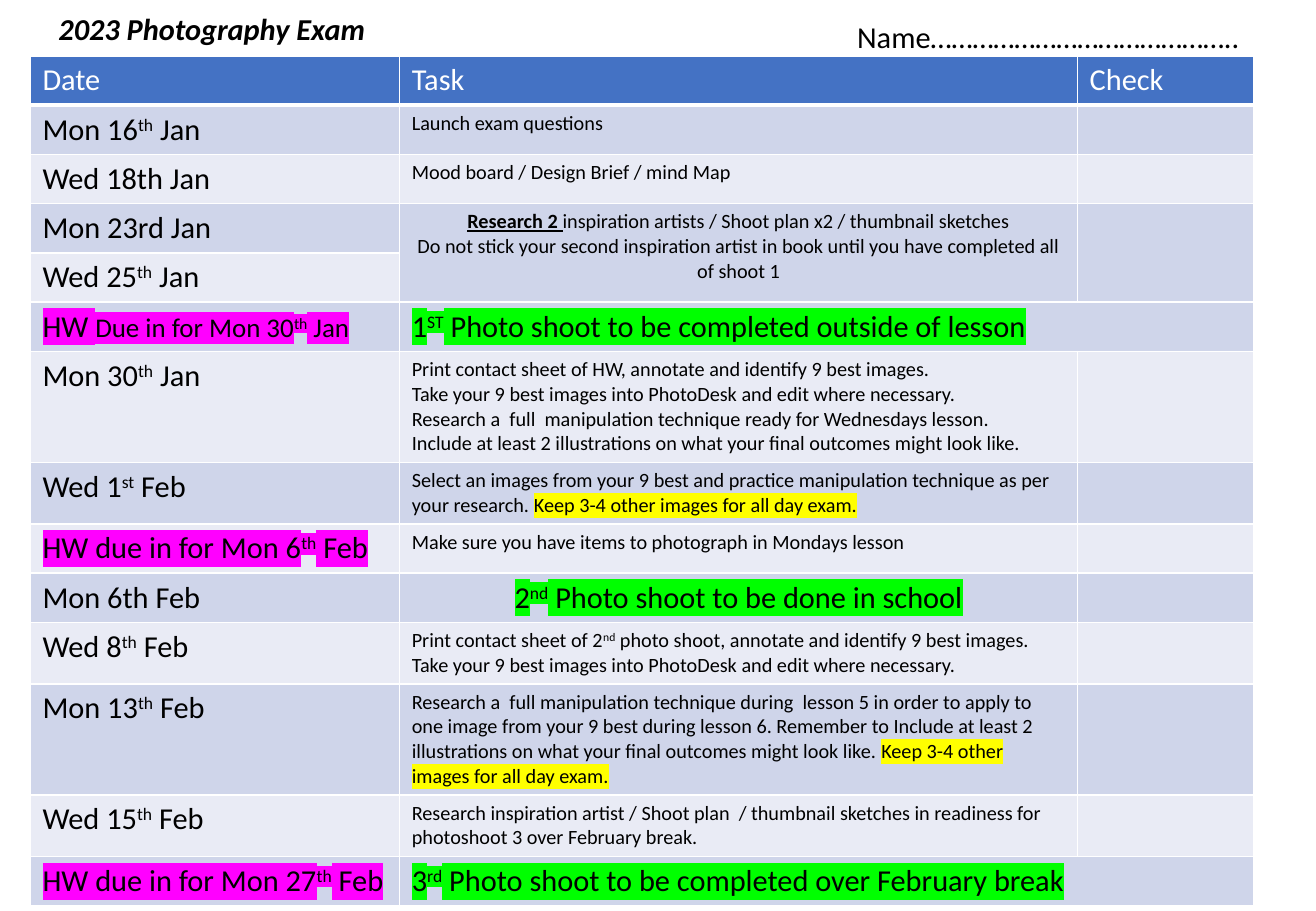
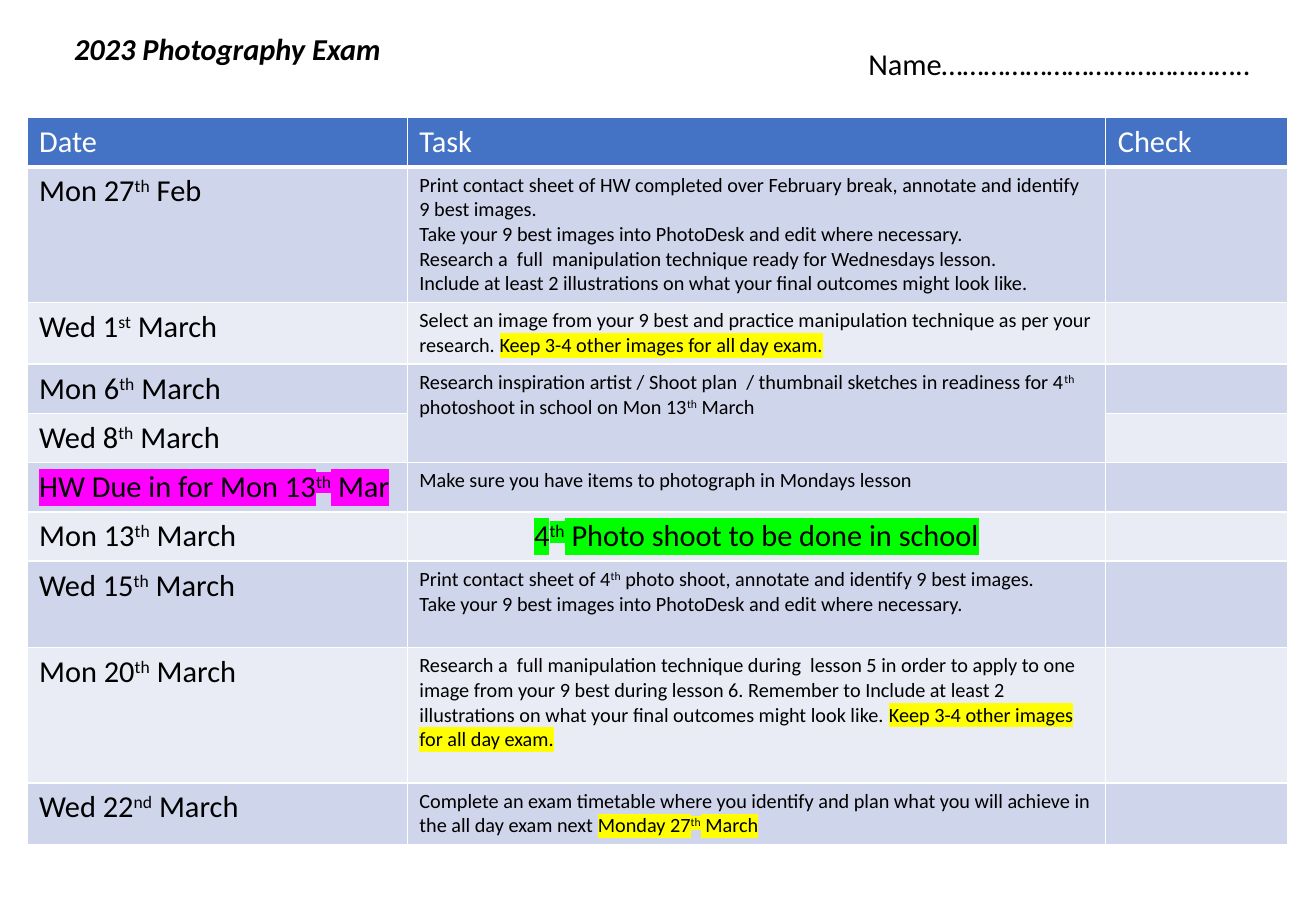
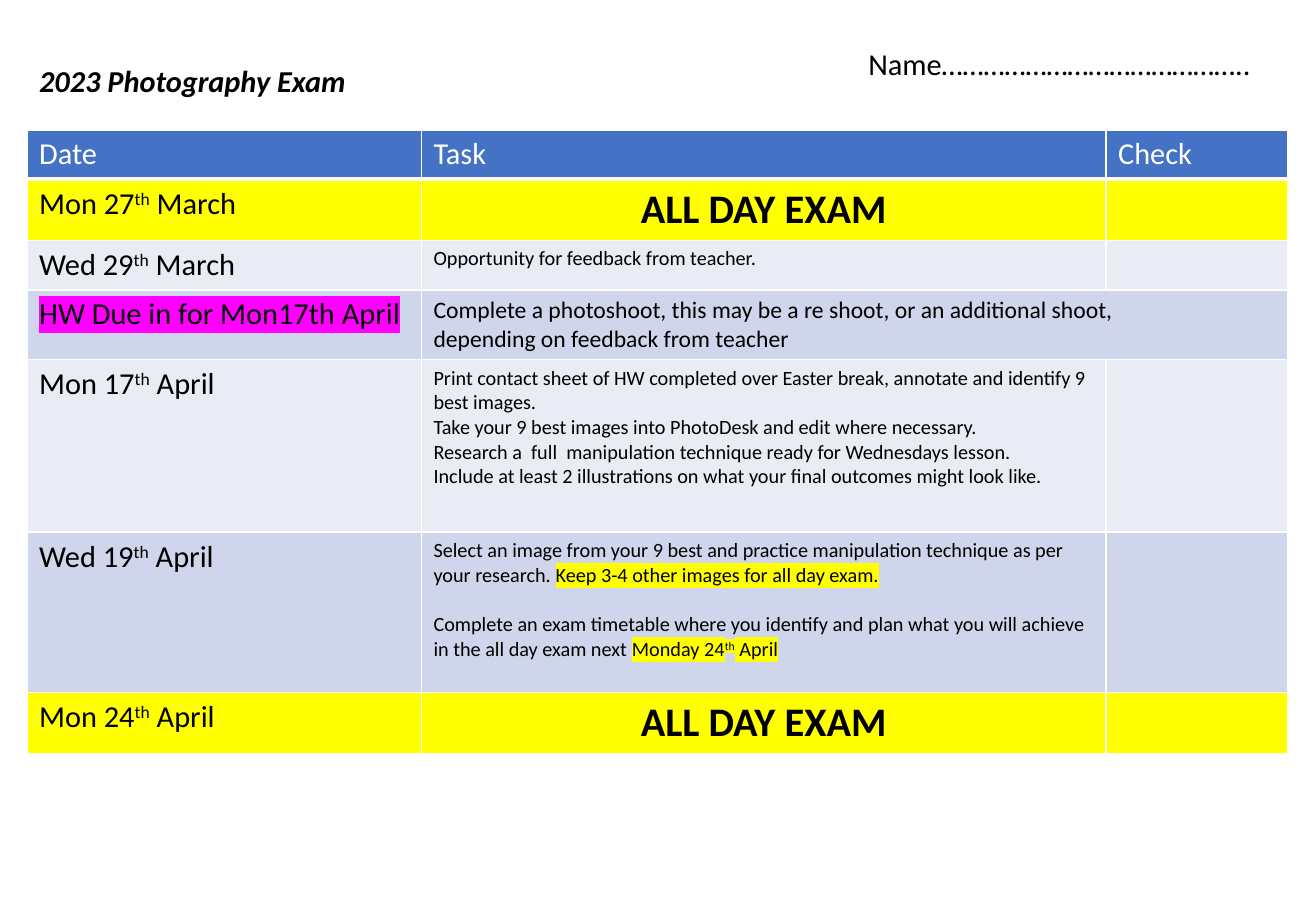
"""Build a three-page photography exam timetable."""
from dataclasses import dataclass

from lxml import etree
from pptx import Presentation
from pptx.dml.color import RGBColor
from pptx.enum.text import MSO_ANCHOR, MSO_AUTO_SIZE, PP_ALIGN
from pptx.oxml.ns import qn
from pptx.util import Pt

LEFT, CENTER = PP_ALIGN.LEFT, PP_ALIGN.CENTER
TOP = MSO_ANCHOR.TOP
GROW = MSO_AUTO_SIZE.SHAPE_TO_FIT_TEXT


@dataclass
class Theme:
    font: str = "Calibri"
    head: str = "4472C4"
    dark: str = "CFD5EA"
    light: str = "E9EBF5"
    white: str = "FFFFFF"
    black: str = "000000"
    yellow: str = "FFFF00"
    pink: str = "FF00FF"
    green: str = "00FF00"
    large: int = 24
    main: int = 18
    due: int = 16
    note: int = 14
    small: int = 12


T = Theme()
MARKS = {
    "^": {"sup": True},
    "#": {"glow": T.pink},
    "@": {"glow": T.green, "size": T.main},
    "~": {"glow": T.yellow},
    "%": {"size": T.due},
    "&": {"size": T.note},
    "$": {"size": T.large, "bold": True},
    "*": {"bold": True, "line": True},
}


def write(para, text, size, color):
    """Fill a paragraph, where each mark switches a run style on or off."""
    para.alignment = CENTER if text.startswith("=") else LEFT
    if text.startswith(">"):
        para.space_before = Pt(14.6)
    parts, live = [["", []]], []
    for char in text.lstrip("=>"):
        if char in MARKS:
            live = [m for m in live if m != char] if char in live else live + [char]
            parts.append(["", live])
        else:
            parts[-1][0] += char
    for words, marks in parts:
        if not words:
            continue
        look = {"size": size}
        for mark in marks:
            look.update(MARKS[mark])
        run = para.add_run()
        run.text = words
        font = run.font
        font.size, font.bold = Pt(look["size"]), look.get("bold", False)
        font.underline = look.get("line", False)
        font.color.rgb = RGBColor.from_string(color)
        font.name = T.font
        props = run.font._element
        if "sup" in look:
            props.set("baseline", "30000")
        if "glow" in look:
            glow = etree.Element(qn("a:highlight"))
            etree.SubElement(glow, qn("a:srgbClr"), val=look["glow"])
            props.find(qn("a:latin")).addprevious(glow)


def paint(cell, fill, base):
    """Give a cell its white borders and its fill."""
    props = cell._tc.get_or_add_tcPr()
    for side, width in (("L", 1), ("R", 1), ("T", 1), ("B", base)):
        edge = etree.SubElement(props, qn(f"a:ln{side}"), w=str(Pt(width)))
        solid = etree.SubElement(edge, qn("a:solidFill"))
        etree.SubElement(solid, qn("a:srgbClr"), val=T.white)
    cell.fill.solid()
    cell.fill.fore_color.rgb = RGBColor.from_string(fill)


KEEP = "~Keep 3-4 other images for all day exam.~"
EDIT = "Take your 9 best images into PhotoDesk and edit where necessary."
LOOK = "nclude at least 2 illustrations on what your final outcomes might look like."
STEPS = f"{EDIT}\nResearch a  full  manipulation technique ready for Wednesdays lesson.\nI{LOOK}"
PRINT = "Print contact sheet of"
BEST = "annotate and identify 9 best images."
PICK = f"from your 9 best and practice manipulation technique as per your research. {KEEP}"
STUDY = ("Research a  full manipulation technique during  lesson 5 in order to apply to "
         f"one image from your 9 best during lesson 6. Remember to I{LOOK} {KEEP}")
PLAN = "Research inspiration artist / Shoot plan  / thumbnail sketches in readiness for"
ITEMS = "Make sure you have items to photograph in Mondays lesson"
TIMES = ("Complete an exam timetable where you identify and plan what you will achieve "
         "in the all day exam next")
EXAM = "=$ALL DAY EXAM$"
HEAD = (29.2, "Date", "Task")

PAGES = [
    {
        "title": (27.4, 2.2), "name": (501, 7.2), "grid": (18, 33.1),
        "cols": (218.9, 401.8, 104.4),
        "spans": [(3, 1, 4, 1), (3, 2, 4, 2), (5, 1, 5, 2), (13, 1, 13, 2)],
        "rows": [
            HEAD,
            (29.2, "Mon 16^th^ Jan", "Launch exam questions"),
            (29.2, "Wed 18th Jan", "Mood board / Design Brief / mind Map"),
            (29.2, "Mon 23rd Jan",
             "=*Research 2 *inspiration artists / Shoot plan x2 / thumbnail sketches\n"
             "=Do not stick your second inspiration artist in book until you have "
             "completed all of shoot 1"),
            (29.2, "Wed 25^th^ Jan", ""),
            (29.2, "#HW %Due in for Mon 30^th^ Jan%#",
             "@1^ST^ Photo shoot to be completed outside of lesson@"),
            (65.8, "Mon 30^th^ Jan", f"{PRINT} HW, {BEST}\n{STEPS}"),
            (36.5, "Wed 1^st^ Feb", f"Select an images {PICK}"),
            (29.2, "#HW due in for Mon 6^th^ Feb#", ITEMS),
            (29.2, "Mon 6th Feb", "=@2^nd^ Photo shoot to be done in school@"),
            (36.5, "Wed 8^th^ Feb", f"{PRINT} 2^nd^ photo shoot, {BEST}\n{EDIT}"),
            (65.8, "Mon 13^th^ Feb", STUDY),
            (36.5, "Wed 15^th^ Feb", f"{PLAN} photoshoot 3 over February break."),
            (29.2, "#HW due in for Mon 27^th^ Feb#",
             "@3^rd^ Photo shoot to be completed over February break@"),
        ],
    },
    {
        "title": (36.7, 14.4), "name": (507.6, 23), "grid": (16, 69.8),
        "cols": (225.4, 414, 108),
        "spans": [(3, 1, 4, 1)],
        "rows": [
            HEAD,
            (80.4, "Mon 27^th^ Feb",
             f"{PRINT} HW completed over February break, {BEST}\n{STEPS}"),
            (36.5, "Wed 1^st^ March", f"Select an image {PICK}"),
            (29.2, "Mon 6^th^ March",
             f"{PLAN} 4^th^  photoshoot in school on Mon 13^th^ March"),
            (29.2, "Wed 8^th^ March", ""),
            (29.2, "#HW Due in for Mon 13^th^ Mar#", ITEMS),
            (29.2, "Mon 13^th^ March", "=@4^th^ Photo shoot to be done in school@"),
            (51.1, "Wed 15^th^ March", f"{PRINT} 4^th^ photo shoot, {BEST}\n{EDIT}"),
            (80.4, "Mon 20^th^ March", STUDY),
            (36.5, "Wed 22^nd^ March", f"{TIMES} ~Monday 27^th^ March~"),
        ],
    },
    {
        "title": (16, 33), "name": (507.6, 23), "grid": (16, 77),
        "cols": (233.8, 405.8, 108),
        "spans": [(3, 1, 3, 2)],
        "rows": [
            HEAD,
            (36.5, "Mon 27^th^ March", EXAM),
            (29.2, "Wed 29^th^ March", "Opportunity for feedback from teacher."),
            (41.4, "#HW Due in for Mon17th April#",
             "&Complete a photoshoot, this may be a re shoot, or an additional shoot,&\n"
             "&depending on feedback from teacher&"),
            (102.2, "Mon 17^th^ April",
             f"{PRINT} HW completed over Easter break, {BEST}\n{STEPS}"),
            (95, "Wed 19^th^ April",
             f"Select an image {PICK}\n>{TIMES} ~Monday 24^th^ April~"),
            (36.5, "Mon 24^th^ April", EXAM),
        ],
    },
]

deck = Presentation()
deck.slide_width, deck.slide_height = Pt(780), Pt(540)

for page in PAGES:
    slide = deck.slides.add_slide(deck.slide_layouts[5])
    cols, rows = page["cols"], page["rows"]
    high = sum(row[0] for row in rows)
    x, y = page["grid"]
    grid = slide.shapes.add_table(
        len(rows), len(cols), Pt(x), Pt(y), Pt(sum(cols)), Pt(high)).table
    for col, width in zip(grid.columns, cols):
        col.width = Pt(width)
    for i, (height, date, task) in enumerate(rows):
        grid.rows[i].height = Pt(height)
        top = i == 0
        fill = T.head if top else T.yellow if task == EXAM else T.dark if i % 2 else T.light
        for j, text in enumerate((date, task, "Check" if top else "")):
            cell = grid.cell(i, j)
            paint(cell, fill, 3 if top else 1)
            if not text:
                continue
            frame = cell.text_frame
            size = T.small if j == 1 and not top else T.main
            for k, line in enumerate(text.split("\n")):
                para = frame.add_paragraph() if k else frame.paragraphs[0]
                write(para, line, size, T.white if top else T.black)
    for r, c, last, end in page["spans"]:
        grid.cell(r, c).merge(grid.cell(last, end))

    name = slide.shapes.add_textbox(0, 0, 0, 0)
    title = slide.shapes.title
    for box, spot, width, text in (
            (name, page["name"], 268, "Name…………………………………….."),
            (title, page["title"], 352.8, "2023 Photography Exam")):
        box.left, box.top = Pt(spot[0]), Pt(spot[1])
        box.width, box.height = Pt(width), Pt(29.2)
        frame = box.text_frame
        frame.word_wrap, frame.auto_size = True, GROW
        frame.vertical_anchor = TOP
        frame.text = text
        frame.paragraphs[0].alignment = LEFT
        font = frame.paragraphs[0].runs[0].font
        font.name, font.size = T.font, Pt(T.main)
        font.color.rgb = RGBColor.from_string(T.black)
        font.bold = font.italic = box is title

deck.save("out.pptx")
